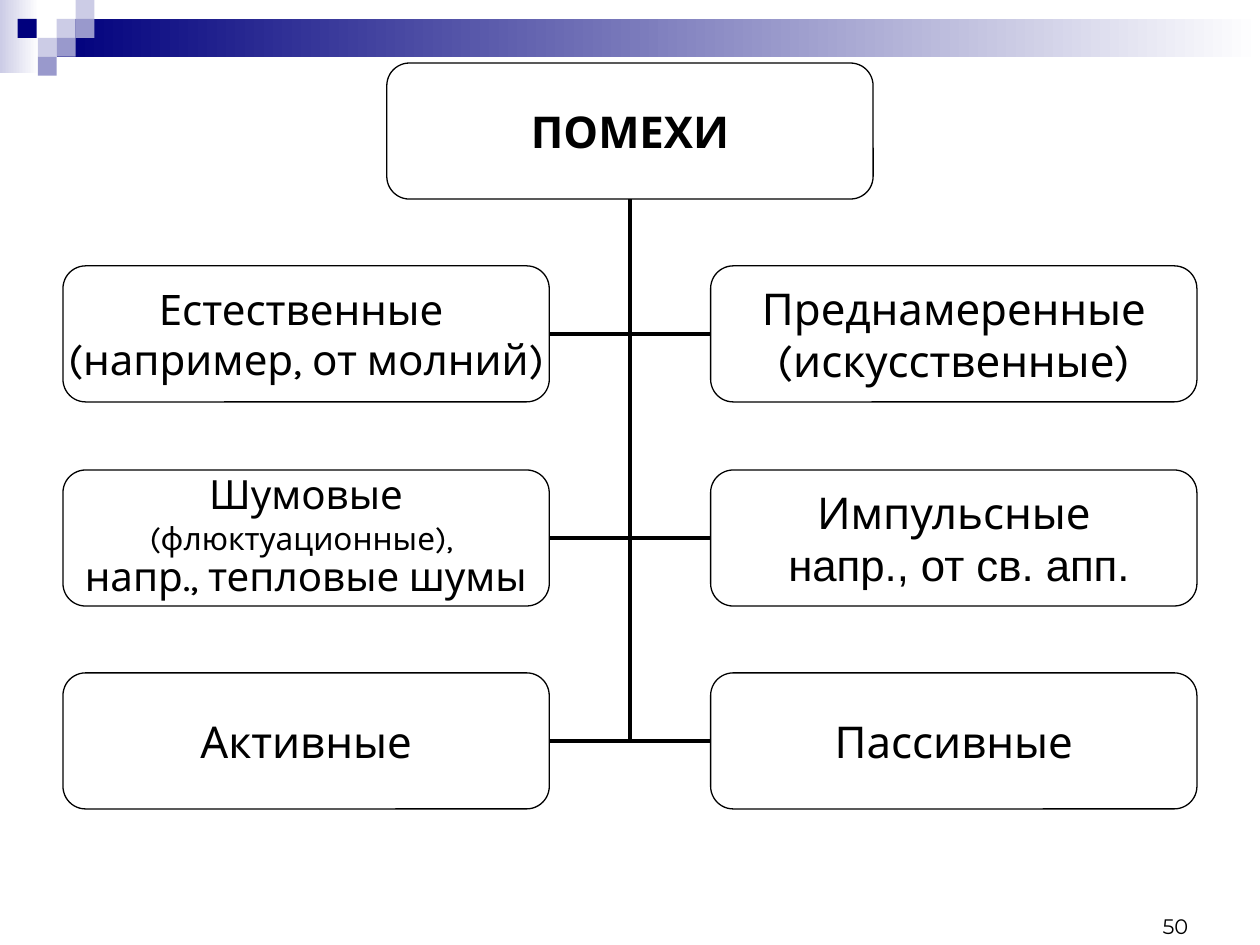
import pptx
import pptx.util
import pptx.dml.color
import pptx.enum.shapes
import pptx.enum.text
import pptx.oxml.ns
import lxml.etree

Inches = pptx.util.Inches
Pt = pptx.util.Pt
Shape = pptx.enum.shapes.MSO_SHAPE
Elbow = pptx.enum.shapes.MSO_CONNECTOR.ELBOW
Align = pptx.enum.text.PP_ALIGN
Anchor = pptx.enum.text.MSO_ANCHOR
qn = pptx.oxml.ns.qn

COLORS = {"ink": "000000", "navy": "00007D", "mid": "9999CC",
          "pale": "CCCCE6", "white": "FFFFFF"}
TOP, LEFT, BOTTOM, RIGHT = range(4)


def tint(name):
    return pptx.dml.color.RGBColor.from_string(COLORS[name])


def apply(target, values):
    for name, value in values.items():
        setattr(target, name, value)


class Sheet:
    """Holds the style and the current slide."""

    font = "Karla"
    frame = {"word_wrap": False, "vertical_anchor": Anchor.MIDDLE,
             "margin_left": 0, "margin_right": 0,
             "margin_top": 0, "margin_bottom": 0}

    def __init__(self, slide):
        self.shapes = slide.shapes

    def shape(self, kind, at):
        shape = self.shapes.add_shape(kind, *map(Inches, at))
        shape.shadow.inherit = False
        return shape

    def tile(self, at, color):
        tile = self.shape(Shape.RECTANGLE, at)
        tile.fill.solid()
        tile.fill.fore_color.rgb = tint(color)
        tile.line.fill.background()

    def fade(self, at, color):
        """Draw a band that fades to white from left to right."""
        band = self.shape(Shape.RECTANGLE, at)
        band.fill.gradient()
        band.fill.gradient_angle = 0
        for stop, name in zip(band.fill.gradient_stops, (color, "white")):
            stop.color.rgb = tint(name)
        band.line.fill.background()

    def label(self, para, text, size, font=None, bold=False):
        """Add runs to a paragraph, with a line break at each newline."""
        for i, part in enumerate(text.split("\n")):
            if i:
                para.add_line_break()
            if part:
                run = para.add_run()
                run.text = part
                apply(run.font, {"size": Pt(size), "bold": bold,
                                 "name": font or self.font})
                run.font.color.rgb = tint("ink")

    def box(self, left, top, paras, space=None):
        """Draw a rounded box; each paragraph is a list of runs."""
        box = self.shape(Shape.ROUNDED_RECTANGLE, (left, top, 3.86, 1.08))
        box.fill.background()
        box.line.color.rgb = tint("ink")
        box.line.width = Pt(0.75)
        frame = box.text_frame
        apply(frame, self.frame)
        for i, runs in enumerate(paras):
            para = frame.add_paragraph() if i else frame.paragraphs[0]
            apply(para, {"alignment": Align.CENTER, "line_spacing": space})
            for run in runs:
                self.label(para, *run)
        return box

    def link(self, box, side, root):
        """Join a box side to the bottom of the root with one bend."""
        link = self.shapes.add_connector(Elbow, 0, 0, 0, 0)
        link.begin_connect(box, side)
        link.end_connect(root, BOTTOM)
        link.line.color.rgb = tint("ink")
        link.line.width = Pt(2.25)
        props = link._element.spPr
        props.find(qn("a:prstGeom")).set("prst", "bentConnector2")
        lxml.etree.SubElement(props, qn("a:effectLst"))

    def number(self, at, text):
        box = self.shapes.add_textbox(*map(Inches, at))
        apply(box.text_frame, {"word_wrap": True,
                               "vertical_anchor": Anchor.BOTTOM})
        para = box.text_frame.paragraphs[0]
        para.alignment = Align.RIGHT
        self.label(para, text, 12, "Montserrat")


def main():
    deck = pptx.Presentation()
    deck.slide_width, deck.slide_height = Inches(10), Inches(7.5)
    sheet = Sheet(deck.slides.add_slide(deck.slide_layouts[6]))

    sheet.fade((0, 0, 0.31, 0.58), "pale")
    sheet.fade((0.45, 0.15, 9.55, 0.3), "navy")
    tiles = [(0.45, 0.15, "pale"), (0.6, 0, "pale"), (0.6, 0.15, "mid"),
             (0.3, 0.3, "pale"), (0.14, 0.15, "navy"),
             (0.45, 0.3, "mid"), (0.3, 0.45, "mid")]
    for left, top, color in tiles:
        sheet.tile((left, top, 0.15, 0.15), color)

    root = sheet.box(3.07, 0.5, [[("ПОМЕХИ", 25, None, True)]])
    rows = [
        (2.11,
         ([[("Естественные \n(например, от молний)", 24)]],),
         ([[("Преднамеренные", 25)], [("(искусственные)", 25)]],)),
        (3.73,
         ([[("Шумовые", 23)],
           [("(флюктуационные),", 18), (" \nнапр., тепловые шумы", 23)]],
          0.85),
         ([[("Импульсные\n ", 25), ("напр., от св. апп.", 25, "Arial")]],)),
        (5.34,
         ([[("Активные", 25)]],),
         ([[("Пассивные", 25)]],)),
    ]
    for top, first, second in rows:
        sheet.link(sheet.box(0.5, top, *first), RIGHT, root)
        sheet.link(sheet.box(5.64, top, *second), LEFT, root)

    sheet.number((7.2, 7, 2.33, 0.5), "50")
    deck.save("out.pptx")


if __name__ == "__main__":
    main()
